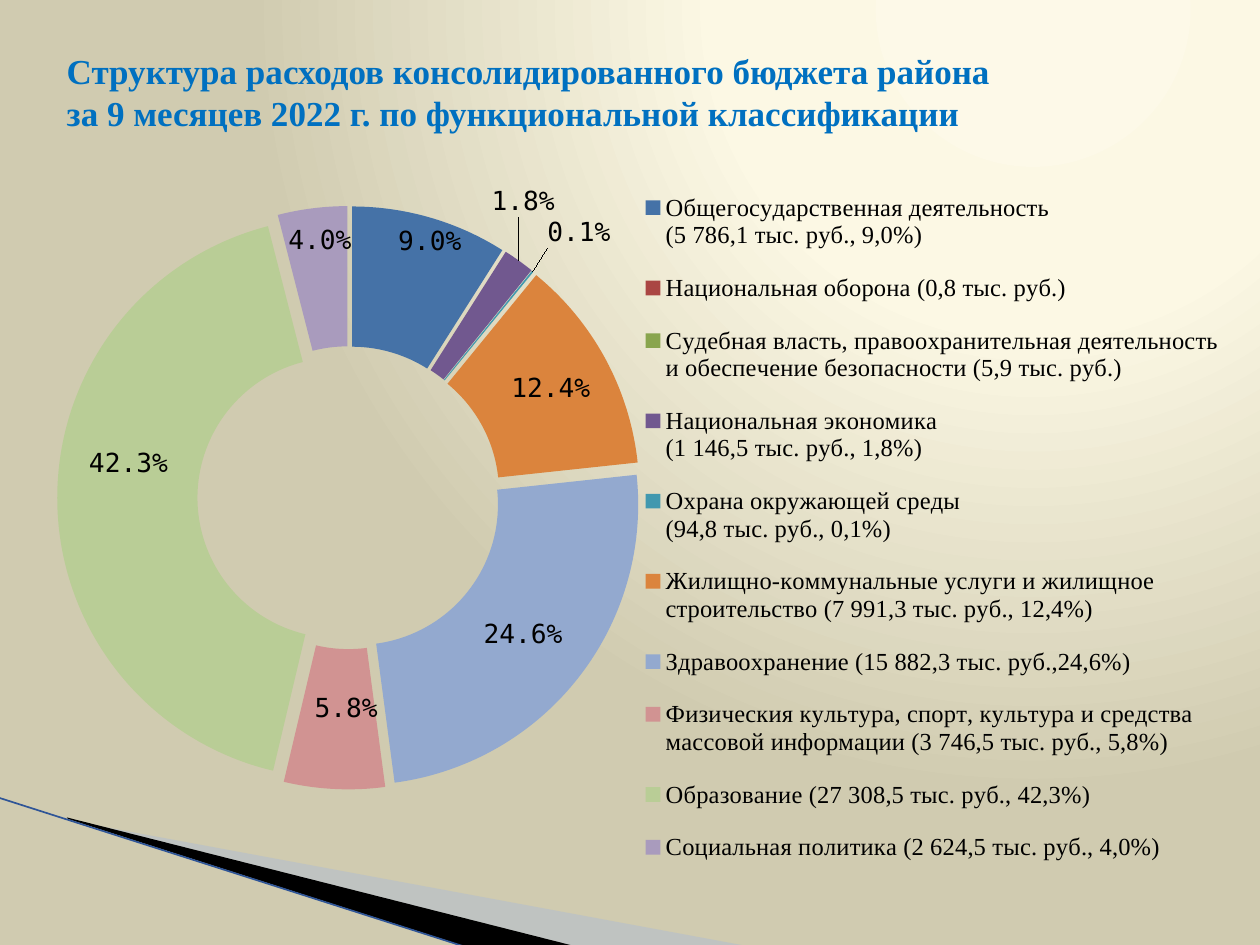
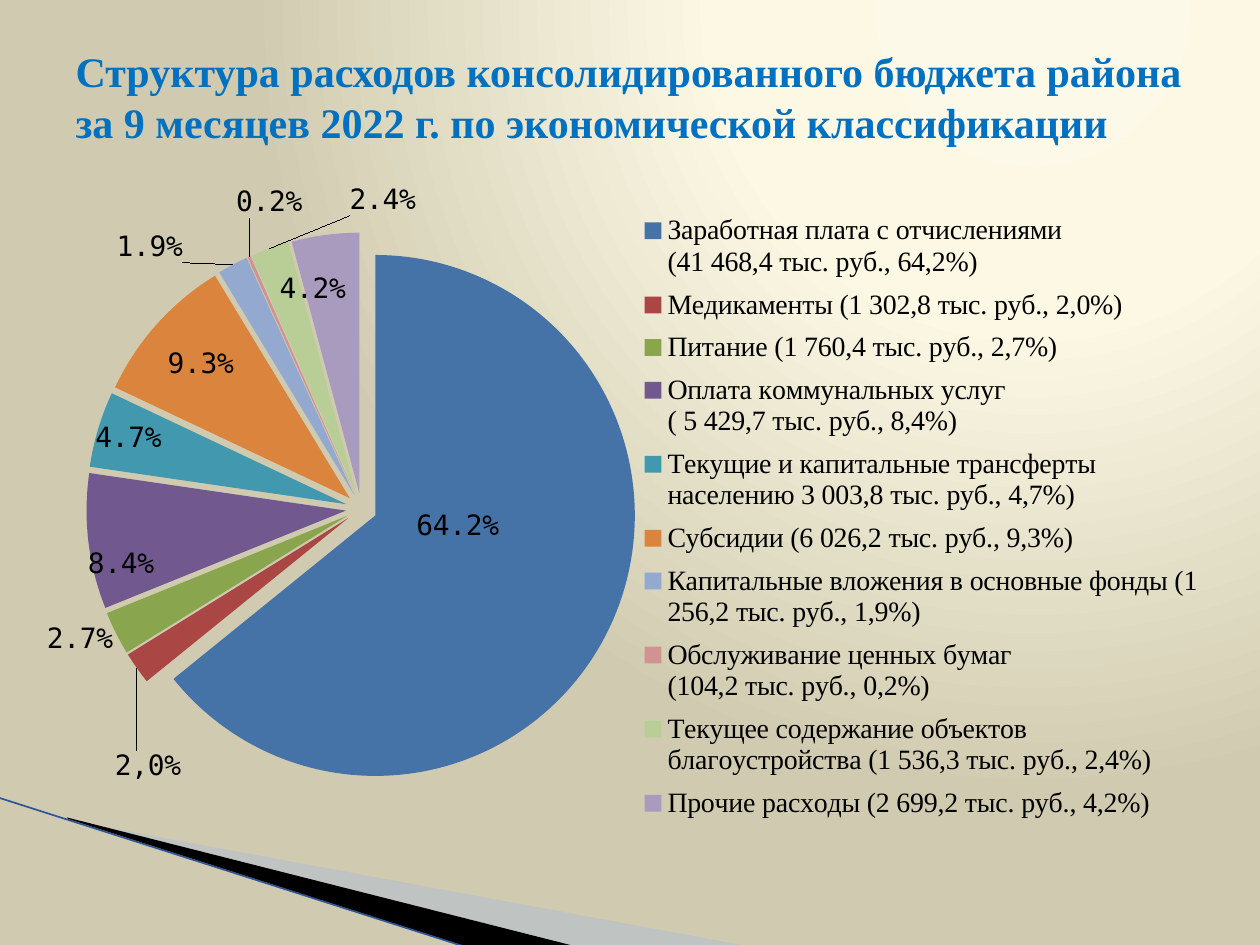
from dataclasses import dataclass
from typing import Optional

from lxml.etree import SubElement
from pptx import Presentation
from pptx.chart.data import CategoryChartData
from pptx.chart.series import PieSeries
from pptx.dml.color import RGBColor
from pptx.enum.chart import XL_CHART_TYPE as ChartType
from pptx.enum.chart import XL_LABEL_POSITION as LabelPosition
from pptx.enum.chart import XL_LEGEND_POSITION as LegendPosition
from pptx.enum.shapes import MSO_CONNECTOR as Connector
from pptx.enum.text import MSO_ANCHOR as Anchor
from pptx.enum.text import MSO_AUTO_SIZE as AutoSize
from pptx.enum.text import PP_ALIGN as Align
from pptx.oxml import parse_xml
from pptx.oxml.ns import nsdecls, qn
from pptx.slide import Slide, SlideMaster
from pptx.util import Cm, Pt

TITLE_BLUE = RGBColor(0x00, 0x70, 0xC0)
BLACK = RGBColor(0x00, 0x00, 0x00)
BAND_BLUE = RGBColor(0xA7, 0xB9, 0xDB)
EDGE_BLUE = RGBColor(0x2F, 0x55, 0x97)
CREAM = RGBColor(0xFD, 0xF9, 0xE8)
LIGHT_CREAM = RGBColor(0xFC, 0xF8, 0xE4)
SAND = RGBColor(0xD0, 0xCB, 0xB0)
SLICE_COLOURS = [
    RGBColor(0x45, 0x72, 0xA7), RGBColor(0xAA, 0x46, 0x43),
    RGBColor(0x89, 0xA5, 0x4E), RGBColor(0x71, 0x58, 0x8F),
    RGBColor(0x41, 0x98, 0xAF), RGBColor(0xDB, 0x84, 0x3D),
    RGBColor(0x93, 0xA9, 0xCF), RGBColor(0xD1, 0x93, 0x92),
    RGBColor(0xB9, 0xCD, 0x96), RGBColor(0xA9, 0x9B, 0xBD),
]
TEXT_FONT = "Times New Roman"
LABEL_FONT = "DejaVu Sans Mono"
PERCENT = "0.0%"

Box = tuple[float, float, float, float]


@dataclass
class Expense:
    name: str
    share: Optional[float] = None
    label_shift: Optional[tuple[float, float]] = None
    label_text: str = ""


@dataclass
class Band:
    points: list[tuple[float, float]]
    colour: RGBColor
    opacity: int = 100


@dataclass
class ChartSlide:
    """Boxes are in centimetres; plot and legend are fractions of the chart."""
    title: str
    title_box: Box
    title_size: int
    chart_type: ChartType
    chart_box: Box
    plot: Box
    legend: Box
    legend_size: int
    label_size: int
    explosion: int
    expenses: list[Expense]
    label_position: Optional[LabelPosition] = None


BANDS = [
    Band([(1.4, 16.54), (15.11, 19.08), (11.58, 19.08), (1.4, 16.51)], BAND_BLUE, 40),
    Band([(1.35, 16.48), (11.61, 19.08), (9.45, 19.1), (1.37, 16.51)], BLACK),
]

FUNCTIONAL = ChartSlide(
    title="Структура расходов консолидированного бюджета района\v"
          "за 9 месяцев 2022 г. по функциональной классификации",
    title_box=(1.09, 0.76, 23.6, 2.16),
    title_size=20,
    chart_type=ChartType.DOUGHNUT_EXPLODED,
    chart_box=(0.89, 3.33, 24, 14.61),
    plot=(0.011, 0.056, 0.49, 0.806),
    legend=(0.501, 0.005, 0.49, 0.99),
    legend_size=14,
    label_size=15,
    explosion=8,
    expenses=[
        Expense("Общегосударственная деятельность\n(5 786,1 тыс. руб., 9,0%)",
                0.09, (0.016, -0.06)),
        Expense("Национальная оборона (0,8 тыс. руб.)"),
        Expense("Судебная власть, правоохранительная деятельность "
                "и обеспечение безопасности (5,9 тыс. руб.)"),
        Expense("Национальная экономика\n(1 146,5 тыс. руб., 1,8%)",
                0.018, (0.038, -0.16)),
        Expense("Охрана окружающей среды\n(94,8 тыс. руб., 0,1%)",
                0.001, (0.076, -0.129)),
        Expense("Жилищно-коммунальные услуги и жилищное строительство "
                "(7 991,3 тыс. руб., 12,4%)", 0.124, (0.006, -0.006)),
        Expense("Здравоохранение (15 882,3 тыс. руб.,24,6%)", 0.246),
        Expense("Физическия культура, спорт, культура и средства массовой "
                "информации (3 746,5 тыс. руб., 5,8%)", 0.058, (0.007, -0.015)),
        Expense("Образование (27 308,5 тыс. руб., 42,3%)", 0.423, (0.001, -0.05)),
        Expense("Социальная политика (2 624,5 тыс. руб., 4,0%)", 0.04, (-0.001, -0.052)),
    ],
)

ECONOMIC = ChartSlide(
    title="Структура расходов консолидированного бюджета района "
          "за 9 месяцев 2022 г. по экономической классификации",
    title_box=(1.27, 0.76, 23.24, 2.36),
    title_size=24,
    chart_type=ChartType.PIE_EXPLODED,
    chart_box=(0.3, 3.2, 24.21, 15.21),
    plot=(0.052, 0.098, 0.467, 0.732),
    legend=(0.531, 0.06, 0.466, 0.83),
    legend_size=16,
    label_size=16,
    explosion=6,
    label_position=LabelPosition.OUTSIDE_END,
    expenses=[
        Expense("Заработная плата с отчислениями\n(41 468,4 тыс. руб., 64,2%)",
                0.642, (-0.167, -0.16)),
        Expense("Медикаменты (1 302,8 тыс. руб., 2,0%)", 0.02, (0.042, 0.104), "2,0%"),
        Expense("Питание (1 760,4 тыс. руб., 2,7%)", 0.027, (0.003, -0.018)),
        Expense("Оплата коммунальных услуг\n( 5 429,7 тыс. руб., 8,4%)",
                0.084, (0.061, 0.008)),
        Expense("Текущие и капитальные трансферты населению "
                "3 003,8 тыс. руб., 4,7%)", 0.047, (0.059, 0.036)),
        Expense("Субсидии (6 026,2 тыс. руб., 9,3%)", 0.093, (0.069, 0.081)),
        Expense("Капитальные вложения в основные фонды "
                "(1 256,2 тыс. руб., 1,9%)", 0.019, (-0.039, 0.006)),
        Expense("Обслуживание ценных бумаг\n(104,2 тыс. руб., 0,2%)",
                0.002, (0.047, -0.042)),
        Expense("Текущее содержание объектов благоустройства "
                "(1 536,3 тыс. руб., 2,4%)", 0.024, (0.124, -0.034)),
        Expense("Прочие расходы (2 699,2 тыс. руб., 4,2%)", 0.042, (0.018, 0.102)),
    ],
)


def set_background(master: SlideMaster) -> None:
    master.background.fill.solid()
    stops = "".join(
        f'<a:gs pos="{position * 1000}"><a:srgbClr val="{colour}"/></a:gs>'
        for position, colour in [(0, CREAM), (40, LIGHT_CREAM), (100, SAND)])
    gradient = parse_xml(
        f'<a:gradFill rotWithShape="1" {nsdecls("a")}><a:gsLst>{stops}</a:gsLst>'
        '<a:path path="circle"><a:fillToRect l="65000" b="98000"/></a:path></a:gradFill>')
    solid = master.element.find(".//" + qn("p:bgPr")).find(qn("a:solidFill"))
    solid.getparent().replace(solid, gradient)


def draw_corner(slide: Slide, master: SlideMaster) -> None:
    """Draw the corner bands and line, then hand them over to the master."""
    pieces = []
    for band in BANDS:
        start, *others = [(Cm(x), Cm(y)) for x, y in band.points]
        builder = slide.shapes.build_freeform(*start)
        builder.add_line_segments(others)
        shape = builder.convert_to_shape()
        shape.shadow.inherit = False
        shape.fill.solid()
        shape.fill.fore_color.rgb = band.colour
        shape.line.fill.background()
        if band.opacity < 100:
            colour = shape.element.spPr.find(qn("a:solidFill"))[0]
            SubElement(colour, qn("a:alpha")).set("val", str(band.opacity * 1000))
        pieces.append(shape)
    edge = slide.shapes.add_connector(
        Connector.STRAIGHT, Cm(-0.03), Cm(16.08), Cm(9.42), Cm(19.1))
    edge.line.color.rgb = EDGE_BLUE
    edge.line.width = Pt(0.95)
    SubElement(edge.element.spPr, qn("a:effectLst"))
    pieces.append(edge)
    for number, piece in enumerate(pieces, start=101):
        piece.element.find(".//" + qn("p:cNvPr")).set("id", str(number))
        master.element.cSld.spTree.append(piece.element)


def manual_layout(box: Box, inner: bool = False):
    """Return a chart layout element placed by fractions of the chart."""
    target = '<c:layoutTarget val="inner"/>' if inner else ""
    sizes = "".join(f'<c:{key} val="{value}"/>' for key, value in zip("xywh", box))
    return parse_xml(
        f'<c:layout {nsdecls("c")}><c:manualLayout>{target}'
        f'<c:xMode val="edge"/><c:yMode val="edge"/>{sizes}</c:manualLayout></c:layout>')


def label_layout(shift: tuple[float, float]):
    return parse_xml(
        f'<c:layout {nsdecls("c")}><c:manualLayout><c:x val="{shift[0]}"/>'
        f'<c:y val="{shift[1]}"/></c:manualLayout></c:layout>')


def format_font(font, name: str, size: int, colour: RGBColor = BLACK) -> None:
    font.name = name
    font.size = Pt(size)
    font.color.rgb = colour


def place_label(series: PieSeries, index: int, content: ChartSlide) -> None:
    expense = content.expenses[index]
    label = series.points[index].data_label
    if expense.label_text:
        label.text_frame.text = expense.label_text
        for run in label.text_frame.paragraphs[0].runs:
            format_font(run.font, LABEL_FONT, content.label_size)
    else:
        format_font(label.font, LABEL_FONT, content.label_size)
    if content.label_position is not None:
        label.position = content.label_position
    for element in series.data_labels._element.findall(qn("c:dLbl")):
        identifier = element.find(qn("c:idx"))
        if identifier.get("val") == str(index):
            identifier.addnext(label_layout(expense.label_shift))


def add_title(slide: Slide, content: ChartSlide) -> None:
    title = slide.shapes.title
    title.left, title.top, title.width, title.height = map(Cm, content.title_box)
    frame = title.text_frame
    frame.text = content.title
    frame.word_wrap = True
    frame.auto_size = AutoSize.NONE
    frame.vertical_anchor = Anchor.MIDDLE
    paragraph = frame.paragraphs[0]
    paragraph.alignment = Align.LEFT
    for run in paragraph.runs:
        format_font(run.font, TEXT_FONT, content.title_size, TITLE_BLUE)
        run.font.bold = True


def add_expense_chart(slide: Slide, content: ChartSlide) -> None:
    data = CategoryChartData(number_format=PERCENT)
    data.categories = [expense.name for expense in content.expenses]
    data.add_series("Series 1", [expense.share for expense in content.expenses])
    chart = slide.shapes.add_chart(
        content.chart_type, *map(Cm, content.chart_box), data).chart
    chart.has_title = False
    format_font(chart.font, LABEL_FONT, 18)

    plot_area = chart.element.find(".//" + qn("c:plotArea"))
    for layout in plot_area.findall(qn("c:layout")):
        plot_area.remove(layout)
    plot_area.insert(0, manual_layout(content.plot, inner=True))

    chart.has_legend = True
    legend = chart.legend
    legend.position = LegendPosition.RIGHT
    legend.include_in_layout = False
    format_font(legend.font, TEXT_FONT, content.legend_size)
    legend_element = chart.element.find(".//" + qn("c:legend"))
    for layout in legend_element.findall(qn("c:layout")):
        legend_element.remove(layout)
    legend_element.find(qn("c:legendPos")).addnext(manual_layout(content.legend))

    plot = chart.plots[0]
    plot.vary_by_categories = True
    series = plot.series[0]
    for explosion in series._element.findall(qn("c:explosion")):
        series._element.remove(explosion)
    series._element.find(qn("c:tx")).addnext(
        parse_xml(f'<c:explosion {nsdecls("c")} val="{content.explosion}"/>'))

    labels = series.data_labels
    labels.show_value = True
    labels.number_format = PERCENT
    labels.number_format_is_linked = False
    format_font(labels.font, LABEL_FONT, content.label_size)
    if content.label_position is not None:
        labels.position = content.label_position
    for index, expense in enumerate(content.expenses):
        fill = series.points[index].format.fill
        fill.solid()
        fill.fore_color.rgb = SLICE_COLOURS[index]
        if expense.label_shift:
            place_label(series, index, content)
    for body in labels._element.iter(qn("a:bodyPr")):
        body.set("wrap", "none")


def main() -> None:
    presentation = Presentation()
    presentation.slide_width, presentation.slide_height = Cm(25.4), Cm(19.05)
    master = presentation.slide_master
    set_background(master)
    title_only = presentation.slide_layouts[5]
    for number, content in enumerate([FUNCTIONAL, ECONOMIC]):
        slide = presentation.slides.add_slide(title_only)
        if number == 0:
            draw_corner(slide, master)
        add_title(slide, content)
        add_expense_chart(slide, content)
    presentation.save("out.pptx")


if __name__ == "__main__":
    main()
